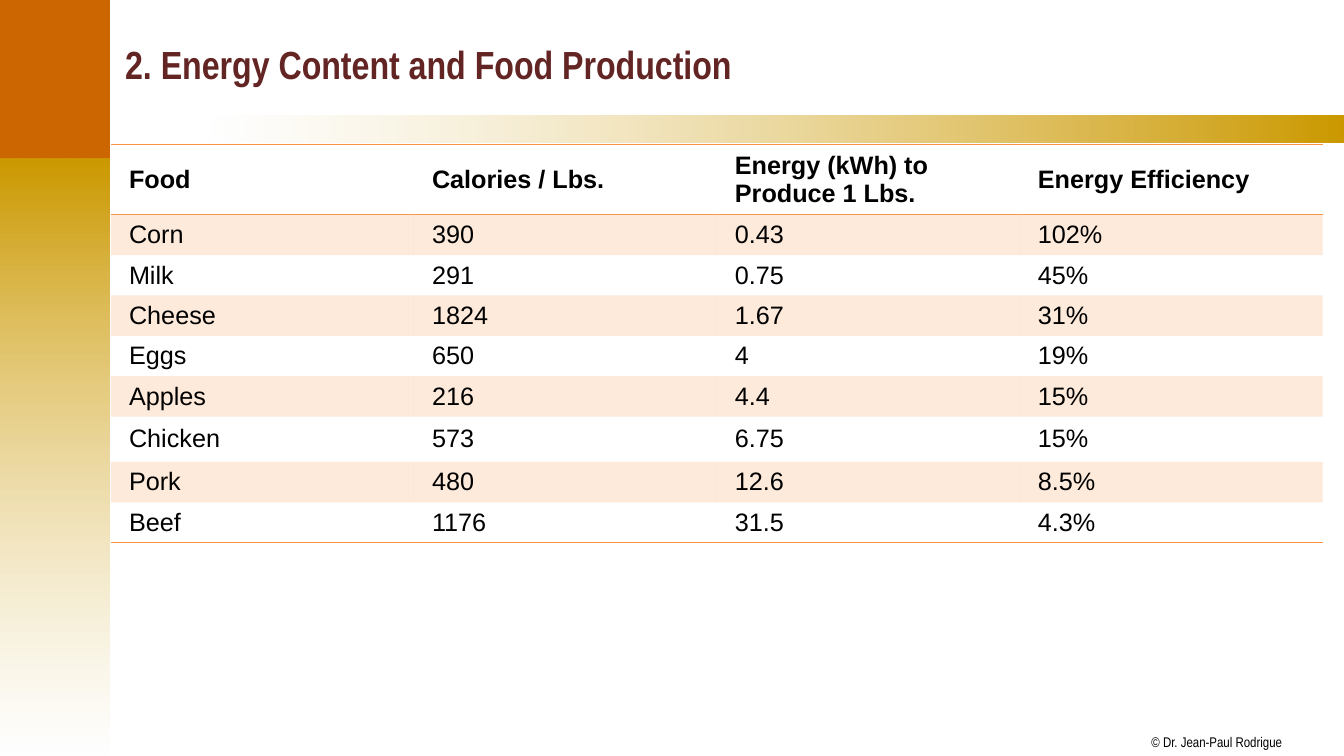
import pptx
import pptx.dml.color
import pptx.enum.shapes
import pptx.enum.text
import pptx.oxml
import pptx.oxml.ns
import pptx.util
from dataclasses import dataclass

Inches = pptx.util.Inches
Anchor = pptx.enum.text.MSO_ANCHOR
qn = pptx.oxml.ns.qn


@dataclass
class Theme:
    gold: str = "CC9900"
    rust: str = "CC6600"
    white: str = "FFFFFF"
    maroon: str = "632523"
    ink: str = "000000"
    accent: str = "F79646"
    head: str = "Arial Narrow"
    body: str = "Arial"
    title: int = 28
    cell: int = 18
    note: int = 10


FOODS = [
    ("Food", "Calories / Lbs.", "Energy (kWh) to Produce 1 Lbs.", "Energy Efficiency"),
    ("Corn", "390", "0.43", "102%"),
    ("Milk", "291", "0.75", "45%"),
    ("Cheese", "1824", "1.67", "31%"),
    ("Eggs", "650", "4", "19%"),
    ("Apples", "216", "4.4", "15%"),
    ("Chicken", "573", "6.75", "15%"),
    ("Pork", "480", "12.6", "8.5%"),
    ("Beef", "1176", "31.5", "4.3%"),
]
NO_STYLE = "{2D5ABB26-0587-4C30-8999-92F81FD0307C}"


def rgb(code):
    return pptx.dml.color.RGBColor.from_string(code)


def write(frame, text, *, font, size, color, bold=False, anchor=Anchor.TOP,
          wrap=True, align=pptx.enum.text.PP_ALIGN.LEFT):
    frame.word_wrap = wrap
    frame.vertical_anchor = anchor
    para = frame.paragraphs[0]
    para.alignment = align
    run = para.add_run()
    run.text = text
    run.font.name = font
    run.font.size = pptx.util.Pt(size)
    run.font.bold = bold
    run.font.color.rgb = rgb(color)


def fade(node, percent):
    """Set the opacity of every plain colour under a node."""
    for color in node.iter(qn("a:srgbClr")):
        alpha = color.makeelement(qn("a:alpha"), {"val": str(percent * 1000)})
        color.append(alpha)


class Deck:
    def __init__(self, theme):
        self.theme = theme
        self.prs = pptx.Presentation()
        self.prs.slide_width = Inches(13.33)
        self.prs.slide_height = Inches(7.5)
        self.slide = self.prs.slides.add_slide(self.prs.slide_layouts[5])

    def title(self, text, box):
        shape = self.slide.shapes.title
        shape.left, shape.top, shape.width, shape.height = map(Inches, box)
        style = self.theme
        write(shape.text_frame, text, font=style.head, size=style.title,
              color=style.maroon, bold=True, anchor=Anchor.MIDDLE)

    def block(self, box, stops, angle=0):
        """Draw a rectangle; stops are (colour, opacity), one or two."""
        kind = pptx.enum.shapes.MSO_SHAPE.RECTANGLE
        shape = self.slide.shapes.add_shape(kind, *map(Inches, box))
        shape.shadow.inherit = False
        shape.line.fill.background()
        if len(stops) == 1:
            shape.fill.solid()
            shape.fill.fore_color.rgb = rgb(stops[0][0])
            return
        shape.fill.gradient()
        shape.fill.gradient_angle = angle
        nodes = shape.element.iter(qn("a:gs"))
        for stop, node, (color, alpha) in zip(shape.fill.gradient_stops, nodes, stops):
            stop.color.rgb = rgb(color)
            if alpha < 100:
                fade(node, alpha)

    def note(self, text, box):
        frame = self.slide.shapes.add_textbox(*map(Inches, box)).text_frame
        frame.margin_left = frame.margin_right = 0
        frame.margin_top = frame.margin_bottom = 0
        style = self.theme
        write(frame, text, font=style.head, size=style.note, color=style.ink, wrap=False)

    def rule(self, cell, sides):
        """Add accent borders, which come before the fill of a cell."""
        for place, side in enumerate(sides):
            line = pptx.oxml.parse_xml(
                f'<a:ln{side} xmlns:a="http://schemas.openxmlformats.org/drawingml/2006/main"'
                f' w="12700"><a:solidFill><a:srgbClr val="{self.theme.accent}"/>'
                f'</a:solidFill></a:ln{side}>')
            cell._tc.get_or_add_tcPr().insert(place, line)

    def table(self, data, box, heights):
        shape = self.slide.shapes.add_table(len(data), len(data[0]), *map(Inches, box))
        grid = shape.table
        grid.horz_banding = False
        shape.element.find(f".//{qn('a:tableStyleId')}").text = NO_STYLE
        for row, height in zip(grid.rows, heights):
            row.height = Inches(height)
        sides = {0: "TB", len(data) - 1: "B"}
        style = self.theme
        for r, values in enumerate(data):
            for c, text in enumerate(values):
                cell = grid.cell(r, c)
                cell.margin_left = cell.margin_right = Inches(0.18)
                cell.margin_top = cell.margin_bottom = Inches(0.05)
                cell.vertical_anchor = Anchor.MIDDLE
                write(cell.text_frame, text, font=style.body, size=style.cell,
                      color=style.ink, bold=r == 0, anchor=None)
                if r % 2:
                    cell.fill.solid()
                    cell.fill.fore_color.rgb = rgb(style.accent)
                    fade(cell._tc.tcPr, 20)
                else:
                    cell.fill.background()
                self.rule(cell, sides.get(r, ""))


def main():
    theme = Theme()
    deck = Deck(theme)

    # Side bar, top band and corner
    deck.block((-0.02, 1.57, 1.11, 5.93), [(theme.gold, 100), (theme.white, 51)], 270)
    deck.block((2.09, 1.15, 11.25, 0.26), [(theme.white, 50), (theme.gold, 100)])
    deck.block((-0.02, -0.01, 1.11, 1.58), [(theme.rust, 100)])

    # Credit and title
    deck.note("© Dr. Jean-Paul Rodrigue", (11.42, 7.28, 1.31, 0.17))
    deck.title("2. Energy Content and Food Production", (1.14, 0.11, 11.97, 1.04))

    # Food table, with a taller row for chicken
    heights = [0.45 if row[0] == "Chicken" else 0.4 for row in FOODS]
    deck.table(FOODS, (1.1, 1.43, 12.02, 3.65), heights)

    deck.prs.save("out.pptx")


if __name__ == "__main__":
    main()
